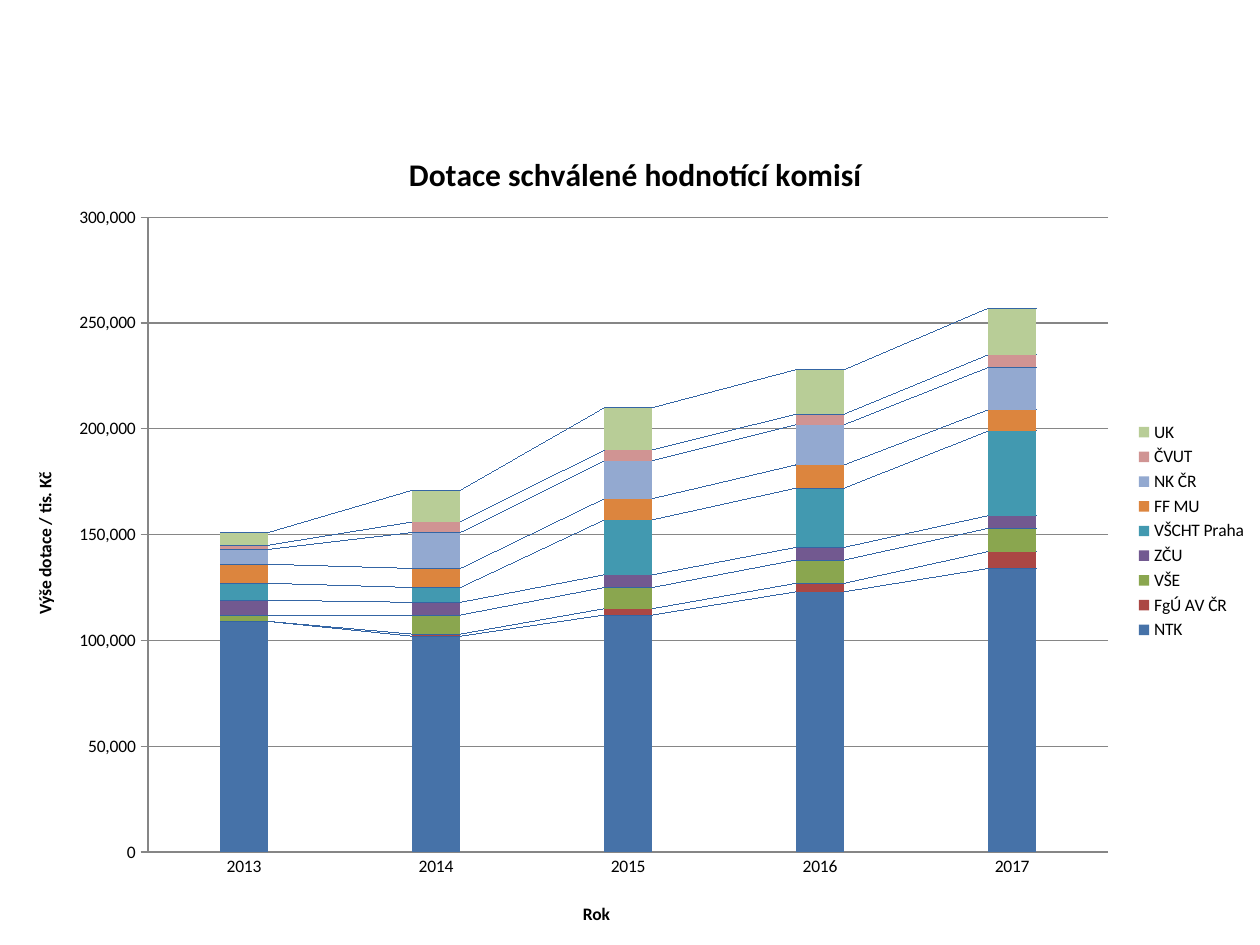
from lxml.etree import SubElement
from pptx import Presentation
from pptx.chart.data import CategoryChartData
from pptx.dml.color import RGBColor
from pptx.enum.chart import XL_CHART_TYPE as ChartType
from pptx.enum.chart import XL_LEGEND_POSITION as LegendPosition
from pptx.enum.chart import XL_TICK_MARK as TickMark
from pptx.oxml import parse_xml
from pptx.oxml.ns import nsdecls, qn
from pptx.util import Cm, Pt

YEARS = ["2013", "2014", "2015", "2016", "2017"]
# Recipient, grants per year, colour
GRANTS = [
    ("NTK", (109000, 102000, 112000, 123000, 134000), "4672A8"),
    ("FgÚ AV ČR", (0, 1000, 3000, 4000, 8000), "AB4744"),
    ("VŠE", (3000, 9000, 10000, 11000, 11000), "8AA64F"),
    ("ZČU", (7000, 6000, 6000, 6000, 6000), "725990"),
    ("VŠCHT Praha", (8000, 7000, 26000, 28000, 40000), "4299B0"),
    ("FF MU", (9000, 9000, 10000, 11000, 10000), "DC853E"),
    ("NK ČR", (7000, 17000, 18000, 19000, 20000), "93A9D0"),
    ("ČVUT", (2000, 5000, 5000, 5000, 6000), "D09493"),
    ("UK", (6000, 15000, 20000, 21000, 22000), "B8CD97"),
]
AXIS_GREY = "868686"
LINK_BLUE = "3A67A5"


def color(value):
    return RGBColor.from_string(value)


def apply_format(target, values):
    for name, value in values.items():
        setattr(target, name, value)


def format_font(font, size, bold=False):
    apply_format(font, {"name": "Calibri", "size": Pt(size), "bold": bold})
    font.color.rgb = color("000000")


def format_line(line, value):
    line.color.rgb = color(value)
    line.width = Pt(0.75)


def set_layout(parent, **fractions):
    """Fix the place of a chart part, in fractions of the chart."""
    layout = parent.find(qn("c:layout"))
    if layout is None:
        layout = parse_xml(f"<c:layout {nsdecls('c')}/>")
        overlay = parent.find(qn("c:overlay"))
        if overlay is not None:
            overlay.addprevious(layout)
        elif parent.tag == qn("c:plotArea"):
            parent.insert(0, layout)
        else:
            parent.find(qn("c:tx")).addnext(layout)
    for child in list(layout):
        layout.remove(child)
    manual = SubElement(layout, qn("c:manualLayout"))
    if "w" in fractions:
        SubElement(manual, qn("c:layoutTarget")).set("val", "inner")
    for side in ("x", "y"):
        SubElement(manual, qn(f"c:{side}Mode")).set("val", "edge")
    for side, fraction in fractions.items():
        SubElement(manual, qn(f"c:{side}")).set("val", str(fraction))


def add_title(owner, text, size, x, y):
    """Title of the chart or of one of its axes."""
    owner.has_title = True
    title = owner.chart_title if hasattr(owner, "chart_title") else owner.axis_title
    title.text_frame.text = text
    format_font(title.text_frame.paragraphs[0].runs[0].font, size, bold=True)
    set_layout(title._element, x=x, y=y)


def add_series_lines(plot):
    """Lines that join the same series from column to column."""
    lines = parse_xml(
        f'<c:serLines {nsdecls("c", "a")}><c:spPr><a:ln w="9525"><a:solidFill>'
        f'<a:srgbClr val="{LINK_BLUE}"/></a:solidFill></a:ln></c:spPr></c:serLines>')
    plot._element.find(qn("c:overlap")).addnext(lines)


def add_grants_chart(slide, left, top, width, height):
    data = CategoryChartData(number_format="#,##0")
    data.categories = YEARS
    for name, values, _ in GRANTS:
        data.add_series(name, values)
    chart = slide.shapes.add_chart(
        ChartType.COLUMN_STACKED, left, top, width, height, data).chart
    format_font(chart.font, 10)
    add_title(chart, "Dotace schválené hodnotící komisí", 18, 0.32, 0.036)

    # Columns
    plot = chart.plots[0]
    apply_format(plot, {"gap_width": 300, "overlap": 100, "vary_by_categories": False})
    for series, (_, _, fill) in zip(plot.series, GRANTS):
        series.format.fill.solid()
        series.format.fill.fore_color.rgb = color(fill)
    add_series_lines(plot)
    plot_area = chart._chartSpace.chart.plotArea
    set_layout(plot_area, x=0.1175, y=0.121, w=0.762, h=0.767)

    # Axes
    years, amounts = chart.category_axis, chart.value_axis
    apply_format(years, {"major_tick_mark": TickMark.NONE})
    apply_format(amounts, {
        "minimum_scale": 0, "maximum_scale": 300000, "major_unit": 50000,
        "major_tick_mark": TickMark.OUTSIDE, "has_major_gridlines": True})
    apply_format(amounts.tick_labels,
                 {"number_format": "#,##0", "number_format_is_linked": False})
    for line in (years.format.line, amounts.format.line,
                 amounts.major_gridlines.format.line):
        format_line(line, AXIS_GREY)
    add_title(years, "Rok", 10, 0.46, 0.945)
    add_title(amounts, "Výše dotace / tis. Kč", 10, 0.024, 0.425)

    # Legend
    chart.has_legend = True
    apply_format(chart.legend,
                 {"position": LegendPosition.RIGHT, "include_in_layout": False})
    format_font(chart.legend.font, 10)


def main():
    presentation = Presentation()
    apply_format(presentation, {"slide_width": Cm(25.4), "slide_height": Cm(19.05)})
    slide = presentation.slides.add_slide(presentation.slide_layouts[6])
    add_grants_chart(slide, Cm(0), Cm(2.36), Cm(25.4), Cm(16.69))
    presentation.save("out.pptx")


if __name__ == "__main__":
    main()
